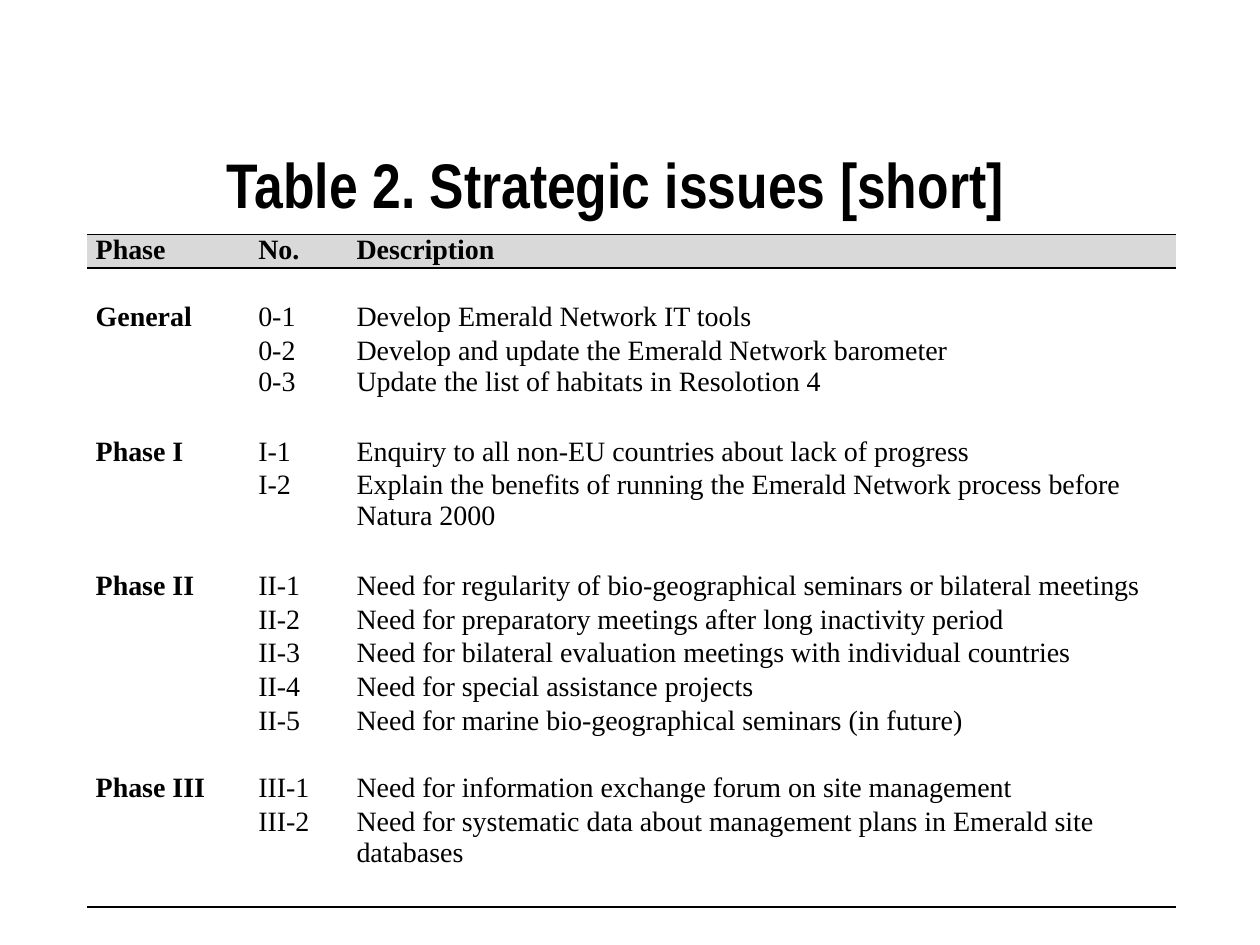
from lxml.etree import SubElement
from pptx import Presentation
from pptx.dml.color import RGBColor
from pptx.enum.text import MSO_ANCHOR as Anchor, PP_ALIGN as Align
from pptx.oxml.ns import qn
from pptx.util import Inches, Pt


def color(value):
    return RGBColor.from_string(value)


def add_border(cell, side):
    line = SubElement(cell._tc.get_or_add_tcPr(), qn(f"a:{side}"), w=str(Pt(1)))
    fill = SubElement(line, qn("a:solidFill"))
    SubElement(fill, qn("a:srgbClr"), val="000000")


BLANK = ("", "", "")
ROWS = [
    ("Phase", "No.", "Description"),
    BLANK,
    ("General", "0-1", "Develop Emerald Network IT tools"),
    ("", "0-2\n0-3", "Develop and update the Emerald Network barometer\n"
                     "Update the list of habitats in Resolotion 4"),
    BLANK,
    ("Phase I", "I-1", "Enquiry to all non-EU countries about lack of progress"),
    ("", "I-2", "Explain the benefits of running the Emerald Network process before Natura 2000"),
    BLANK,
    ("Phase II", "II-1", "Need for regularity of bio-geographical seminars or bilateral meetings"),
    ("", "II-2", "Need for preparatory meetings after long inactivity period"),
    ("", "II-3", "Need for bilateral evaluation meetings with individual countries"),
    ("", "II-4", "Need for special assistance projects"),
    ("", "II-5", "Need for marine bio-geographical seminars (in future)"),
    BLANK,
    ("Phase III", "III-1", "Need for information exchange forum on site management"),
    ("", "III-2", "Need for systematic data about management plans in Emerald site databases"),
    BLANK,
]
COLUMN_WIDTHS = [1.29, 0.78, 6.57]
ROW_HEIGHT = 0.26
LAST_ROW = len(ROWS) - 1

presentation = Presentation()
presentation.slide_width = Inches(10)
presentation.slide_height = Inches(7.5)
slide = presentation.slides.add_slide(presentation.slide_layouts[6])

title = slide.shapes.add_textbox(Inches(0.12), Inches(1.13), Inches(9.53), Inches(0.72))
title.text_frame.word_wrap = True
title.text_frame.vertical_anchor = Anchor.MIDDLE
title.text_frame.text = "Table 2. Strategic issues [short]"
paragraph = title.text_frame.paragraphs[0]
paragraph.alignment = Align.CENTER
paragraph.line_spacing = 0.9
paragraph.space_after = Pt(12)
font = paragraph.runs[0].font
font.name = "Arial Narrow"
font.size = Pt(36)
font.bold = True
font.color.rgb = color("000000")

table = slide.shapes.add_table(
    len(ROWS), len(COLUMN_WIDTHS), Inches(0.69), Inches(1.86),
    Inches(sum(COLUMN_WIDTHS)), Inches(ROW_HEIGHT * len(ROWS))).table
table.horz_banding = False
table.first_row = False
NO_STYLE_NO_GRID = "{2D5ABB26-0587-4C30-8999-92F81FD0307C}"
table._tbl.tblPr.find(qn("a:tableStyleId")).text = NO_STYLE_NO_GRID

for column, width in zip(table.columns, COLUMN_WIDTHS):
    column.width = Inches(width)

for row_index, texts in enumerate(ROWS):
    table.rows[row_index].height = Inches(ROW_HEIGHT)
    for column_index, text in enumerate(texts):
        cell = table.cell(row_index, column_index)
        cell.margin_left = cell.margin_right = Inches(0.07)
        cell.margin_top = cell.margin_bottom = 0
        if row_index == 0:
            add_border(cell, "lnT")
        if row_index in (0, LAST_ROW):
            add_border(cell, "lnB")
        if row_index == 0:
            cell.fill.solid()
            cell.fill.fore_color.rgb = color("D9D9D9")
        else:
            cell.fill.background()
        cell.text_frame.text = text
        for paragraph in cell.text_frame.paragraphs:
            paragraph.line_spacing = 1.0
            for run in paragraph.runs:
                run.font.name = "Times New Roman"
                run.font.size = Pt(16)
                run.font.bold = row_index == 0 or column_index == 0
                run.font.color.rgb = color("000000")
            if not text:
                end = SubElement(paragraph._p, qn("a:endParaRPr"), sz="1600")
                SubElement(end, qn("a:latin"), typeface="Times New Roman")

presentation.save("out.pptx")
